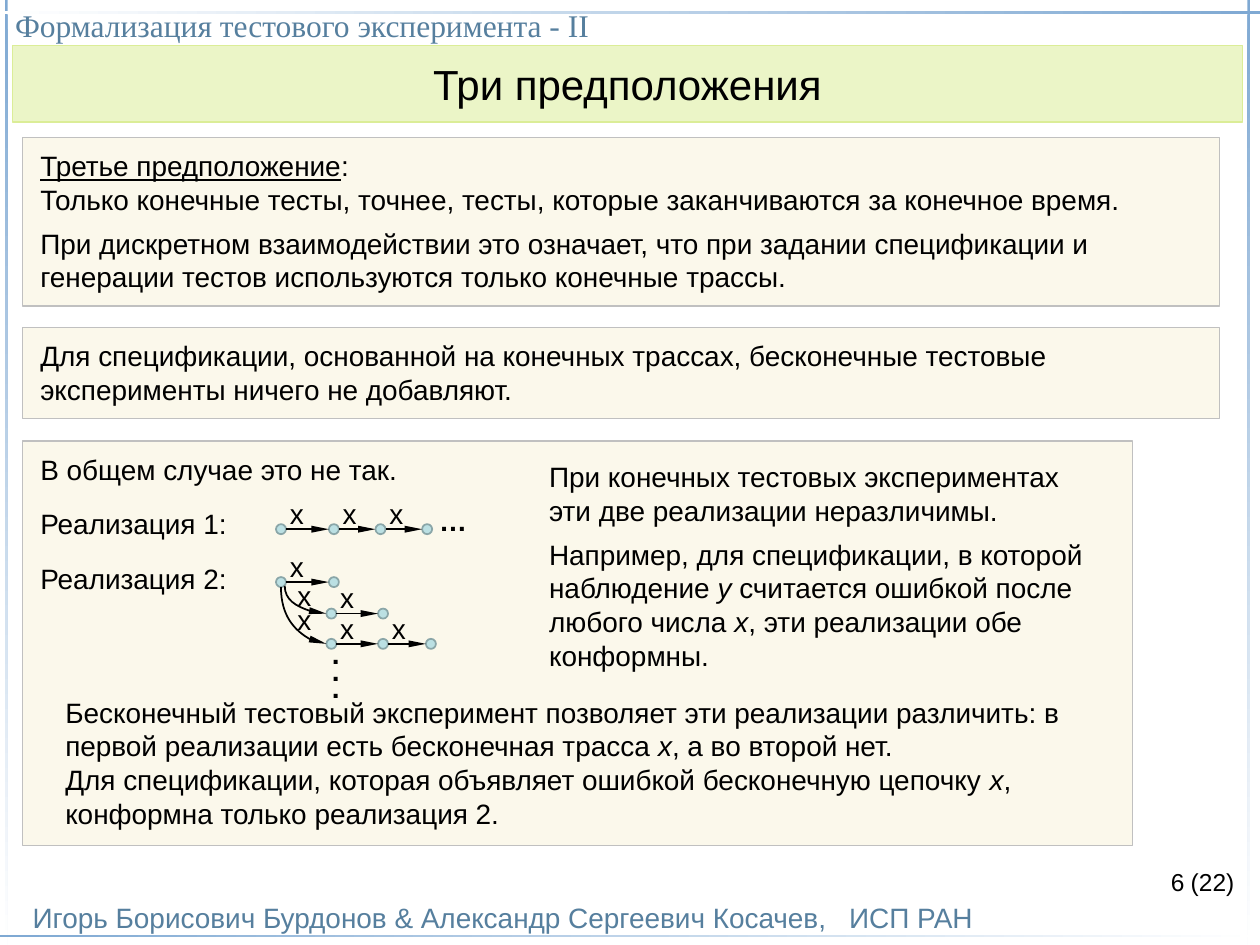
from itertools import pairwise

from lxml.etree import SubElement
from pptx import Presentation
from pptx.dml.color import RGBColor
from pptx.enum.shapes import MSO_CONNECTOR, MSO_SHAPE
from pptx.enum.text import MSO_ANCHOR, MSO_AUTO_SIZE, PP_ALIGN
from pptx.oxml.ns import qn
from pptx.util import Inches, Pt

BLACK = RGBColor(0x00, 0x00, 0x00)
WHITE = RGBColor(0xFF, 0xFF, 0xFF)
SKY = RGBColor(0x7F, 0xA9, 0xD3)
STEEL = RGBColor(0x56, 0x7F, 0x9E)
LIME = RGBColor(0xEB, 0xF5, 0xC7)
LIME_EDGE = RGBColor(0xDB, 0xED, 0x97)
CREAM = RGBColor(0xFB, 0xF8, 0xEB)
SILVER = RGBColor(0xC0, 0xC0, 0xC0)
AQUA = RGBColor(0xBB, 0xE0, 0xE3)
AQUA_EDGE = RGBColor(0x8A, 0xA6, 0xA8)

NODE = 0.8
RADIUS = NODE / 2
FLUSH = (0, 0)
PANEL_INSET = (1.4, 0.9)
TEXT_INSET = (1, 0.5)


class SlideBuilder:
    """Draws styled elements on a grid of 100 columns by 75 rows."""

    def __init__(self, deck):
        self.page = deck.slides.add_slide(deck.slide_layouts[5])
        self.cell = deck.slide_width / 100

    def grid(self, *cells):
        return [round(self.cell * count) for count in cells]

    def style(self, shape, fill, edge, weight):
        shape.fill.solid()
        shape.fill.fore_color.rgb = fill
        shape.line.color.rgb = edge
        shape.line.width = Pt(weight)

    def shape(self, kind, place, fill, edge, weight=0.75):
        shape = self.page.shapes.add_shape(kind, *self.grid(*place))
        shape.shadow.inherit = False
        self.style(shape, fill, edge, weight)
        return shape

    def rule(self, place, colors, angle=0):
        bar = self.page.shapes.add_shape(MSO_SHAPE.RECTANGLE, *self.grid(*place))
        bar.shadow.inherit = False
        bar.line.fill.background()
        bar.fill.gradient()
        bar.fill.gradient_angle = angle
        for stop, color in zip(bar.fill.gradient_stops, colors):
            stop.color.rgb = color

    def set_text(self, box, paras, inset=FLUSH, size=16, color=BLACK, name="Arial",
                 align=PP_ALIGN.LEFT, anchor=MSO_ANCHOR.TOP, bold=False, wrap=True,
                 underlined=False, after=(), leading=None, tab=None):
        frame = box.text_frame
        frame.auto_size = MSO_AUTO_SIZE.NONE
        frame.word_wrap = wrap
        frame.vertical_anchor = anchor
        frame.margin_left, frame.margin_top = self.grid(*inset)
        frame.margin_right, frame.margin_bottom = self.grid(*inset)
        for index, text in enumerate(paras):
            para = frame.paragraphs[0] if index == 0 else frame.add_paragraph()
            para.alignment = align
            if index < len(after):
                para.space_after = Pt(after[index])
            if leading:
                para.line_spacing = leading
            if tab:
                tabs = SubElement(para._p.get_or_add_pPr(), qn("a:tabLst"))
                SubElement(tabs, qn("a:tab"), pos=str(self.grid(tab)[0]), algn="l")
            font = para.font
            font.name, font.size, font.bold = name, Pt(size), bold
            font.color.rgb = color
            for part, words in enumerate(text.split("*")):
                if words:
                    span = para.add_run()
                    span.text = words
                    if part % 2 and underlined:
                        span.font.underline = True
                    elif part % 2:
                        span.font.italic = True

    def title(self, text, place):
        box = self.page.shapes.title
        box.left, box.top, box.width, box.height = self.grid(*place)
        self.style(box, LIME, LIME_EDGE, 0.75)
        self.set_text(box, [text], (0, 1), 24, align=PP_ALIGN.CENTER, anchor=MSO_ANCHOR.MIDDLE)

    def text(self, place, paras, **options):
        self.set_text(self.page.shapes.add_textbox(*self.grid(*place)), paras, **options)

    def panel(self, place, paras, **options):
        box = self.shape(MSO_SHAPE.RECTANGLE, place, CREAM, SILVER)
        self.set_text(box, paras, PANEL_INSET, **options)

    def label(self, left, top, text="x", **options):
        self.text((left, top, 1.5, 2.7), [text], align=PP_ALIGN.CENTER, wrap=False, **options)

    def arrow(self, kind, start, end):
        link = self.page.shapes.add_connector(kind, *self.grid(*start, *end))
        link.line.color.rgb = BLACK
        link.line.width = Pt(1)
        properties = link._element.spPr
        SubElement(properties.find(qn("a:ln")), qn("a:tailEnd"),
                   type="triangle", w="sm", len="lg")
        SubElement(properties, qn("a:effectLst"))
        return link

    def curve(self, start, end):
        middle_x, middle_y = (start[0] + end[0]) / 2, (start[1] + end[1]) / 2
        half_x, half_y = (end[0] - start[0]) / 2, (end[1] - start[1]) / 2
        link = self.arrow(MSO_CONNECTOR.CURVE, (middle_x + half_y, middle_y - half_x),
                          (middle_x - half_y, middle_y + half_x))
        properties = link._element.spPr
        properties.find(qn("a:xfrm")).set("rot", str(270 * 60000))
        properties.find(qn("a:prstGeom")).set("prst", "curvedConnector2")

    def chain(self, row, columns):
        for column in columns:
            self.shape(MSO_SHAPE.OVAL, (column - RADIUS, row - RADIUS, NODE, NODE),
                       AQUA, AQUA_EDGE, 1)
        for left, right in pairwise(columns):
            self.arrow(MSO_CONNECTOR.STRAIGHT, (left + RADIUS, row), (right - RADIUS, row))
            self.label(left + 0.5, row - 2.6)


def main():
    deck = Presentation()
    deck.slide_width, deck.slide_height = Inches(10), Inches(7.5)
    slide = SlideBuilder(deck)

    for column in (0.4, 99):
        slide.rule((column, 0, 0.2, 75), (SKY, WHITE), 270)
    slide.rule((0, 0.9, 100, 0.2), (WHITE, SKY))
    slide.rule((0, 74.2, 100, 0.2), (SKY, WHITE))
    slide.text((2.6, 71.4, 90, 2.7),
               ["Игорь Борисович Бурдонов & Александр Сергеевич Косачев,\tИСП РАН"],
               color=STEEL, anchor=MSO_ANCHOR.BOTTOM, tab=64.8)
    slide.text((1.2, 0.5, 97.3, 3), ["Формализация тестового эксперимента - II"],
               size=18, color=STEEL, name="Times New Roman")
    slide.text((94.5, 68.8, 3.5, 2.4), ["(22)"], size=14, wrap=False)
    slide.text((71.7, 68.3, 23.3, 5.2), ["6"], size=14, inset=TEXT_INSET, align=PP_ALIGN.RIGHT)
    slide.title("Три предположения", (1, 3.6, 97.6, 6.1))

    slide.panel((1.8, 10.9, 95, 13.4), [
        "*Третье предположение*:",
        "Только конечные тесты, точнее, тесты, которые заканчиваются за конечное время.",
        "При дискретном взаимодействии это означает, что при задании спецификации и "
        "генерации тестов используются только конечные трассы.",
    ], underlined=True, after=(0, 6))
    slide.panel((1.8, 26, 95, 7.2), [
        "Для спецификации, основанной на конечных трассах, бесконечные тестовые "
        "эксперименты ничего не добавляют.",
    ])
    slide.panel((1.8, 35, 88.1, 32.1), [
        "В общем случае это не так.", "Реализация 1:", "Реализация 2:",
    ], after=(12, 12))

    slide.chain(42, (22.3, 26.5, 30.2, 33.9))
    slide.label(35.2, 40, "…", bold=True)
    slide.chain(46.2, (22.3, 26.5))
    slide.chain(48.7, (26.3, 30.4))
    slide.chain(51.1, (26.3, 30.4, 34.2))
    slide.curve((22.6, 46.5), (25.9, 48.7))
    slide.curve((22.3, 46.6), (25.9, 51.1))
    for row in (45.9, 47.8):
        slide.label(23.4, row)
    slide.text((25.9, 52.3, 1.5, 3.7), ["."] * 3, align=PP_ALIGN.CENTER, bold=True,
               after=(6, 6, 6), leading=0.2)

    slide.text((42.6, 36, 46.3, 18), [
        "При конечных тестовых экспериментах эти две реализации неразличимы.",
        "Например, для спецификации, в которой наблюдение *y* считается ошибкой после "
        "любого числа *x*, эти реализации обе конформны.",
    ], inset=TEXT_INSET, after=(6,))
    slide.text((4.2, 54.7, 88.6, 11.8), [
        "Бесконечный тестовый эксперимент позволяет эти реализации различить: в первой "
        "реализации есть бесконечная трасса *x*, а во второй нет.",
        "Для спецификации, которая объявляет ошибкой бесконечную цепочку *x*,",
        "конформна только реализация 2.",
    ], inset=TEXT_INSET)
    deck.save("out.pptx")


if __name__ == "__main__":
    main()
